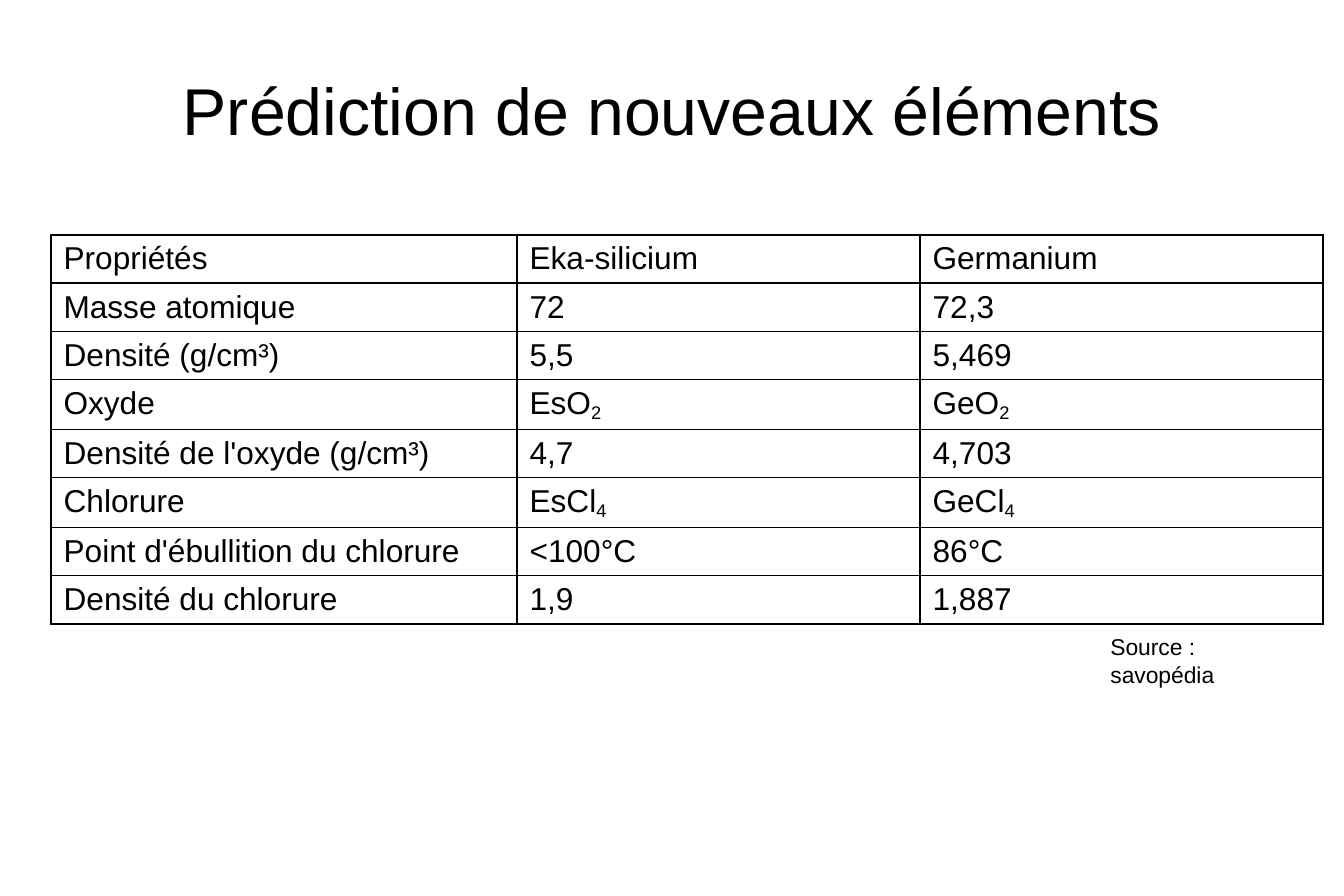
from lxml import etree
from pptx import Presentation
from pptx.dml.color import RGBColor
from pptx.enum.text import MSO_ANCHOR, MSO_AUTO_SIZE, PP_ALIGN
from pptx.oxml.ns import qn
from pptx.util import Pt

BLACK = RGBColor(0, 0, 0)
MIDDLE = MSO_ANCHOR.MIDDLE
NO_FIT = MSO_AUTO_SIZE.NONE
CENTER = PP_ALIGN.CENTER
SCALE = 7234
TITLE_ONLY = 5
COLUMNS = [466, 403, 403]
ROW = 48
ROWS = [
    ["Propriétés", "Eka-silicium", "Germanium"],
    ["Masse atomique", "72", "72,3"],
    ["Densité (g/cm³)", "5,5", "5,469"],
    ["Oxyde", "EsO_2", "GeO_2"],
    ["Densité de l'oxyde (g/cm³)", "4,7", "4,703"],
    ["Chlorure", "EsCl_4", "GeCl_4"],
    ["Point d'ébullition du chlorure", "<100°C", "86°C"],
    ["Densité du chlorure", "1,9", "1,887"],
]


def px(count):
    """Turn whole pixels into EMU."""
    return count * SCALE


class Deck:
    """Hold the style and the current slide."""

    def __init__(self, width, height):
        """Open a deck with one titled slide."""
        self.prs = Presentation()
        self.prs.slide_width = px(width)
        self.prs.slide_height = px(height)
        self.slide = self.prs.slides.add_slide(self.prs.slide_layouts[TITLE_ONLY])

    def style(self, para, size):
        """Set the shared font on a paragraph."""
        font = para.font
        font.name = "Arial"
        font.size = Pt(size)
        font.color.rgb = BLACK

    def title(self, text, left, top, width, height):
        """Place and format the title."""
        shape = self.slide.shapes.title
        shape.left, shape.top = px(left), px(top)
        shape.width, shape.height = px(width), px(height)
        frame = shape.text_frame
        frame.text = text
        frame.auto_size = NO_FIT
        frame.word_wrap = True
        frame.vertical_anchor = MIDDLE
        frame.margin_left = frame.margin_right = 0
        frame.margin_top = frame.margin_bottom = 0
        para = frame.paragraphs[0]
        para.alignment = CENTER
        self.style(para, 37.7)

    def border(self, cell):
        """Draw thin black lines around a cell."""
        props = cell._tc.get_or_add_tcPr()
        for i, side in enumerate("LRTB"):
            line = etree.Element(qn(f"a:ln{side}"), w=str(Pt(0.75)))
            fill = etree.SubElement(line, qn("a:solidFill"))
            etree.SubElement(fill, qn("a:srgbClr"), val=str(BLACK))
            props.insert(i, line)

    def cell(self, cell, text):
        """Fill a cell; an underscore starts a subscript."""
        cell.fill.background()
        self.border(cell)
        para = cell.text_frame.paragraphs[0]
        self.style(para, 18)
        base, _, sub = text.partition("_")
        para.add_run().text = base
        if sub:
            run = para.add_run()
            run.text = sub
            run.font._element.set("baseline", "-16000")

    def table(self, rows, left, top):
        """Add a plain ruled table."""
        frame = self.slide.shapes.add_table(
            len(rows), len(COLUMNS), px(left), px(top),
            px(sum(COLUMNS)), px(ROW * len(rows)))
        table = frame.table
        table.first_row = table.horz_banding = False
        for column, width in zip(table.columns, COLUMNS):
            column.width = px(width)
        for r, row in enumerate(rows):
            table.rows[r].height = px(ROW)
            for c, text in enumerate(row):
                self.cell(table.cell(r, c), text)

    def note(self, text, left, top, width, height):
        """Add a small line of text."""
        box = self.slide.shapes.add_textbox(
            px(left), px(top), px(width), px(height))
        frame = box.text_frame
        frame.word_wrap = False
        frame.text = text
        self.style(frame.paragraphs[0], 13)


def main():
    """Build and save the slide."""
    deck = Deck(1344, 896)
    deck.title("Prédiction de nouveaux éléments", 67, 35, 1210, 149)
    deck.table(ROWS, 51, 235)
    deck.note("Source : savopédia", 1098, 627, 216, 38)
    deck.prs.save("out.pptx")


if __name__ == "__main__":
    main()
